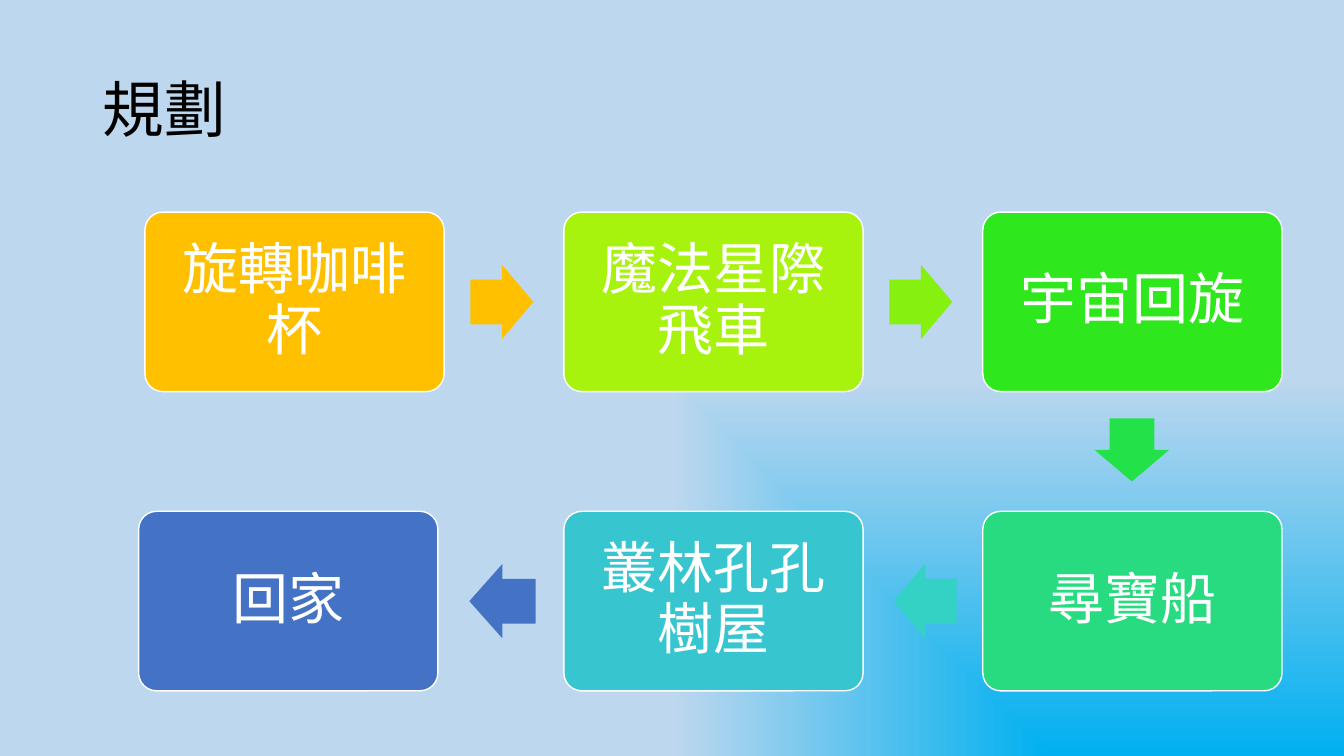
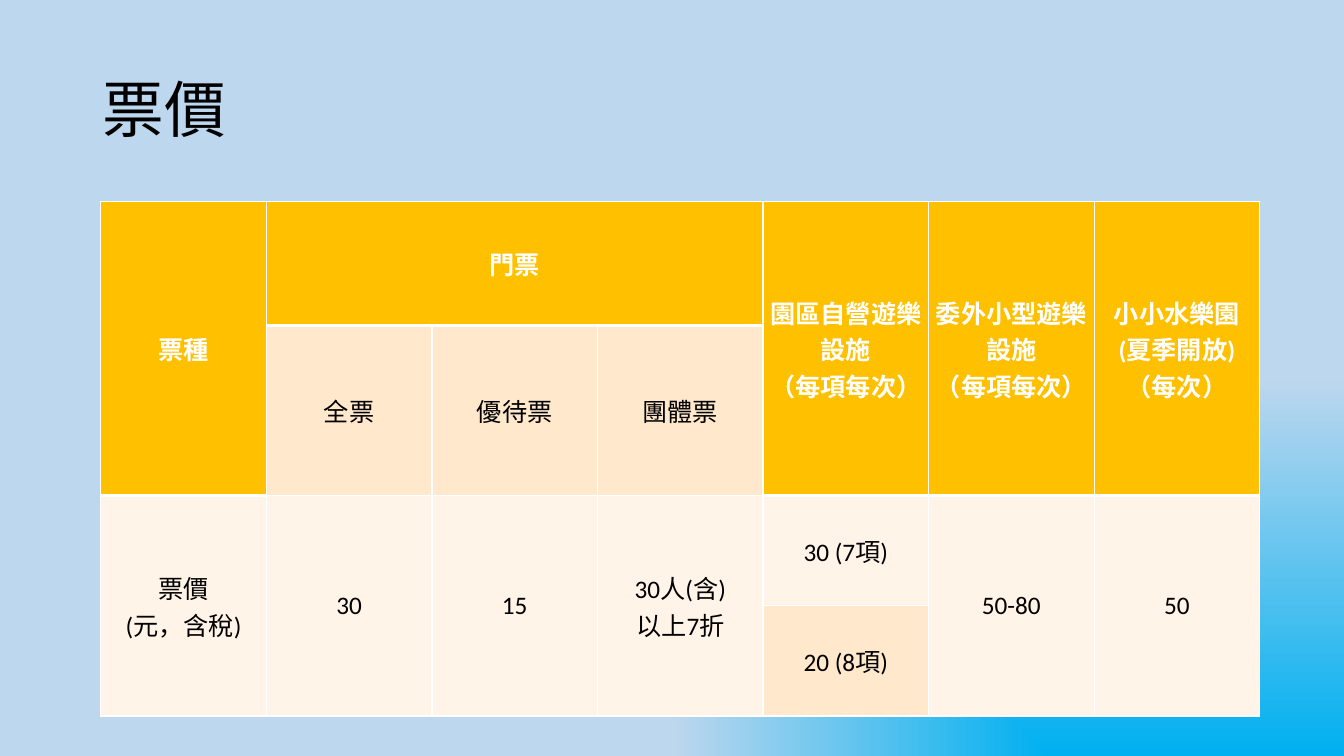
from lxml import etree
from pptx import Presentation
from pptx.dml.color import RGBColor
from pptx.enum.shapes import MSO_SHAPE
from pptx.enum.text import MSO_ANCHOR, PP_ALIGN
from pptx.oxml.ns import qn
from pptx.util import Pt

PX = 9525  # EMU per px, 96 px to the inch
WHITE, BLACK, GOLD = "FFFFFF", "000000", "FFC000"
SKY, PALE_SKY = "00B0F0", "BDD7EE"
CREAM, PEACH = "FFF4E7", "FFE8CC"
TITLE = {"name": "Noto Sans CJK SC", "size": Pt(44)}
STEP = {"name": "Calibri", "size": Pt(40)}
HEADER = {"name": "Calibri", "size": Pt(18), "bold": True}
BODY = {**HEADER, "bold": False}


def rgb(color):
    return RGBColor.from_string(color)


def write(tf, text, fmt, color, align, spacing=1.0):
    """Fill a text frame with one formatted paragraph; \\v breaks a line."""
    tf.word_wrap = True
    tf.vertical_anchor = MSO_ANCHOR.MIDDLE
    p = tf.paragraphs[0]
    p.text = text
    p.alignment = align
    p.line_spacing = spacing
    for r in p.runs:
        for name, value in fmt.items():
            setattr(r.font, name, value)
        r.font.color.rgb = rgb(color)


prs = Presentation()
prs.slide_width, prs.slide_height = 1280 * PX, 720 * PX

# Shared background: light radiating from the bottom right corner
master = prs.slide_master
fill = master.background.fill
fill.gradient()
for stop, color in zip(fill.gradient_stops, (SKY, PALE_SKY)):
    stop.color.rgb = rgb(color)
grad = master.element.find(".//" + qn("p:bgPr") + "/" + qn("a:gradFill"))
grad.remove(grad.find(qn("a:lin")))
shade = etree.SubElement(grad, qn("a:path"), path="rect")
etree.SubElement(shade, qn("a:fillToRect"), l="100000", t="100000")

# Shared title position, then one slide per title
layout = prs.slide_layouts[5]
sp = layout.placeholders[0]
sp.left, sp.top, sp.width, sp.height = [v * PX for v in (88, 38, 1104, 139)]
slides = []
for title in ("規劃", "票價"):
    s = prs.slides.add_slide(layout)
    write(s.shapes.title.text_frame, title, TITLE, BLACK, PP_ALIGN.LEFT, 0.9)
    slides.append(s)
plan, prices = slides

# Plan: steps run right along the top row and back along the bottom row
LEFT, TOP, COL_PITCH, ROW_PITCH = 138, 202, 399, 285
steps = [
    ("旋轉咖啡杯", GOLD, LEFT, TOP),
    ("魔法星際飛車", "A7F30E", LEFT + COL_PITCH, TOP),
    ("宇宙回旋", "2EE71C", LEFT + 2 * COL_PITCH, TOP),
    ("尋寶船", "29DB80", LEFT + 2 * COL_PITCH, TOP + ROW_PITCH),
    ("叢林孔孔樹屋", "37C6CF", LEFT + COL_PITCH, TOP + ROW_PITCH),
    ("回家", "4472C4", LEFT - 6, TOP + ROW_PITCH),
]
for text, color, x, y in steps:
    sp = plan.shapes.add_shape(MSO_SHAPE.ROUNDED_RECTANGLE,
                               x * PX, y * PX, 285 * PX, 171 * PX)
    sp.adjustments[0] = 0.1
    sp.shadow.inherit = False
    sp.fill.solid()
    sp.fill.fore_color.rgb = rgb(color)
    sp.line.color.rgb = rgb(WHITE)
    sp.line.width = Pt(1)
    tf = sp.text_frame
    for side in ("left", "right", "top", "bottom"):
        setattr(tf, "margin_" + side, 16 * PX)
    write(tf, text, STEP, WHITE, PP_ALIGN.CENTER, 0.9)

arrows = [
    (GOLD, 448, 252, 60, 0),
    ("86F011", 448 + COL_PITCH, 252, 60, 0),
    ("23E148", 1048, 393, 60, 90),
    ("33D2C5", 851, 252 + ROW_PITCH, 60, 180),
    ("4472C4", 447, 252 + ROW_PITCH, 63, 180),
]
for color, x, y, width, turn in arrows:
    sp = plan.shapes.add_shape(MSO_SHAPE.RIGHT_ARROW,
                               x * PX, y * PX, width * PX, 71 * PX)
    sp.adjustments[0], sp.adjustments[1] = 0.6, 0.5
    sp.rotation = turn
    sp.shadow.inherit = False
    sp.fill.solid()
    sp.fill.fore_color.rgb = rgb(color)
    sp.line.fill.background()

# Prices
rows = [
    ["票種", "門票", "", "", "園區自營遊樂設施\v（每項每次）",
     "委外小型遊樂設施\v（每項每次）", "小小水樂園\v(夏季開放)\v（每次）"],
    ["", "全票", "優待票", "團體票", "", "", ""],
    ["票價\v(元，含稅)", "30", "15", "30人(含)\v以上7折", "30 (7項)", "50-80", "50"],
    ["", "", "", "", "20 (8項)", "", ""],
]
fills = [
    [GOLD] * 7,
    [GOLD] + [PEACH] * 3 + [GOLD] * 3,
    [CREAM] * 7,
    [CREAM] * 4 + [PEACH] + [CREAM] * 2,
]
heights = (118, 162, 105, 105)
table = prices.shapes.add_table(4, 7, 96 * PX, 192 * PX,
                                1104 * PX, sum(heights) * PX).table
table.horz_banding = False
for col in table.columns:
    col.width = 1104 * PX // 7
for row, height in zip(table.rows, heights):
    row.height = height * PX

for i, texts in enumerate(rows):
    for j, text in enumerate(texts):
        cell = table.cell(i, j)
        color = fills[i][j]
        cell.fill.solid()
        cell.fill.fore_color.rgb = rgb(color)
        for side in ("left", "right", "top", "bottom"):
            setattr(cell, "margin_" + side, 3 * PX)
        cell.vertical_anchor = MSO_ANCHOR.MIDDLE
        if text:
            fmt, ink = (HEADER, WHITE) if color == GOLD else (BODY, BLACK)
            write(cell.text_frame, text, fmt, ink, PP_ALIGN.CENTER)
        above = 3 if i and fills[i - 1][j] == GOLD else 1
        below = 3 if color == GOLD else 1
        tcPr = cell._tc.get_or_add_tcPr()
        for k, (edge, width) in enumerate(zip("LRTB", (1, 1, above, below))):
            ln = etree.Element(qn("a:ln" + edge), w=str(Pt(width)))
            solid = etree.SubElement(ln, qn("a:solidFill"))
            etree.SubElement(solid, qn("a:srgbClr"), val=WHITE)
            tcPr.insert(k, ln)

table.cell(0, 1).merge(table.cell(0, 3))
for top, columns in ((0, (0, 4, 5, 6)), (2, (0, 1, 2, 3, 5, 6))):
    for j in columns:
        table.cell(top, j).merge(table.cell(top + 1, j))

prs.save("out.pptx")
